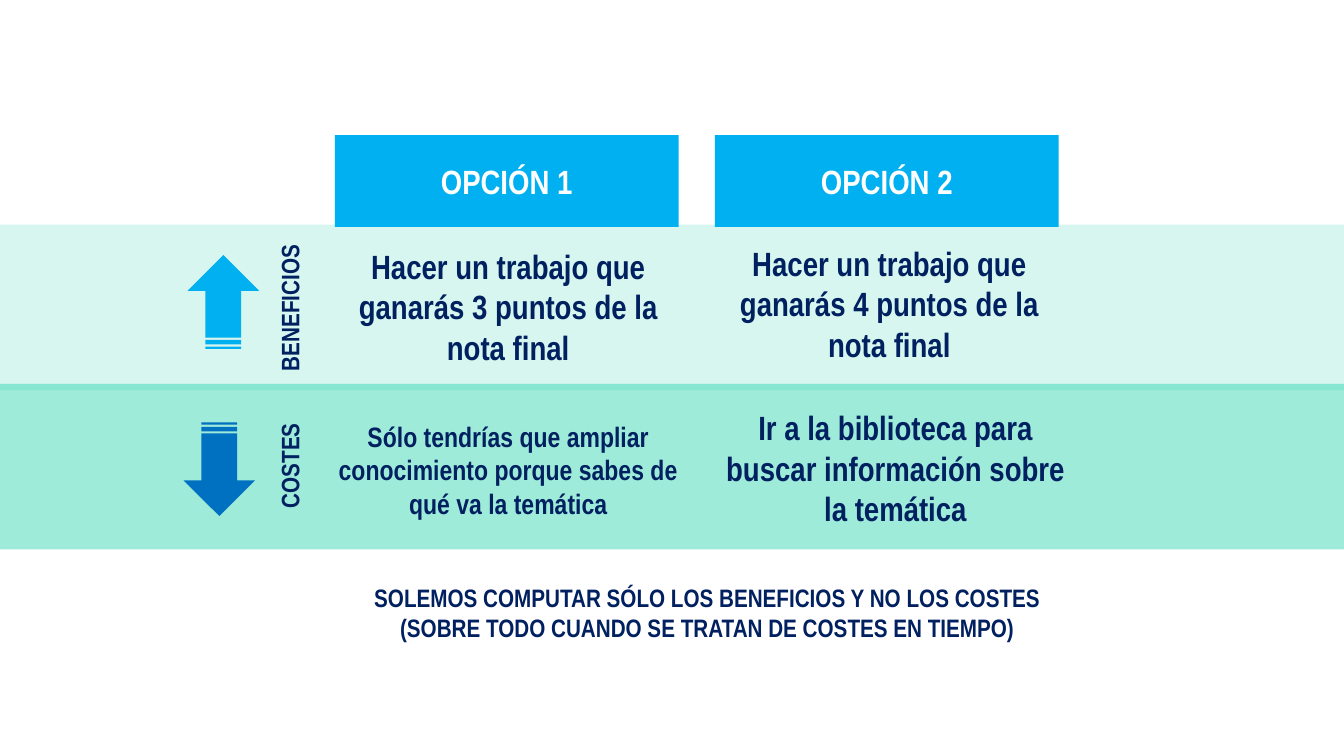
from lxml import etree
from pptx import Presentation
from pptx.dml.color import RGBColor
from pptx.enum.shapes import MSO_SHAPE as Shape
from pptx.enum.text import MSO_ANCHOR as Anchor, MSO_AUTO_SIZE as AutoSize, PP_ALIGN as Align
from pptx.oxml.ns import qn
from pptx.util import Emu, Pt

PX = 9144  # 100 px to the inch
SLIDE_WIDTH, SLIDE_HEIGHT = 1333, 750
FONT = "Arial Narrow"
WHITE = RGBColor(0xFF, 0xFF, 0xFF)
NAVY = RGBColor(0x00, 0x20, 0x60)
SKY = RGBColor(0x00, 0xB0, 0xF0)
BLUE = RGBColor(0x00, 0x70, 0xC0)
MINT = RGBColor(0x29, 0xD3, 0xAD)

BAND_HEIGHT = 164
OPTION_WIDTH = 378
HEADER_WIDTH, HEADER_HEIGHT = 341, 91
ARROW_LENGTH, ARROW_WIDTH = 93, 71
LABEL_LENGTH, LABEL_HEIGHT = 186, 40


def emu(*lengths):
    return [Emu(length * PX) for length in lengths]


def write(shape, text, size, color, align):
    paragraph = shape.text_frame.paragraphs[0]
    paragraph.text = text
    paragraph.alignment = align
    font = paragraph.font
    font.name, font.size, font.bold = FONT, Pt(size), True
    font.color.rgb = color


def add_filled(slide, kind, box, color):
    shape = slide.shapes.add_shape(kind, *emu(*box))
    shape.shadow.inherit = False
    shape.fill.solid()
    shape.fill.fore_color.rgb = color
    shape.line.fill.background()
    return shape


def add_text(slide, box, text, size, align=Align.CENTER):
    textbox = slide.shapes.add_textbox(*emu(*box))
    textbox.text_frame.word_wrap = True
    textbox.text_frame.auto_size = AutoSize.SHAPE_TO_FIT_TEXT
    write(textbox, text, size, NAVY, align)
    return textbox


def add_header(slide, left, top, text):
    header = add_filled(slide, Shape.RECTANGLE, (left, top, HEADER_WIDTH, HEADER_HEIGHT), SKY)
    header.text_frame.vertical_anchor = Anchor.MIDDLE
    write(header, text, 24, WHITE, Align.CENTER)


def add_band(slide, top, opacity, label, label_offset, arrow, options):
    """Draw one translucent row: its arrow, upright label and option texts."""
    band = add_filled(slide, Shape.RECTANGLE, (0, top, SLIDE_WIDTH, BAND_HEIGHT), MINT)
    color = band.fill._xPr.find(qn("a:solidFill"))[0]
    etree.SubElement(color, qn("a:alpha"), val=str(opacity * 1000))

    arrow_left, arrow_offset, rotation, arrow_color = arrow
    arrow_box = (arrow_left, top + arrow_offset, ARROW_LENGTH, ARROW_WIDTH)
    add_filled(slide, Shape.STRIPED_RIGHT_ARROW, arrow_box, arrow_color).rotation = rotation

    label_box = (194, top + label_offset, LABEL_LENGTH, LABEL_HEIGHT)
    add_text(slide, label_box, label, 18, Align.LEFT).rotation = 270

    for left, offset, height, size, text in options:
        add_text(slide, (left, top + offset, OPTION_WIDTH, height), text, size)


def main():
    presentation = Presentation()
    presentation.slide_width, presentation.slide_height = emu(SLIDE_WIDTH, SLIDE_HEIGHT)
    slide = presentation.slides.add_slide(presentation.slide_layouts[6])

    add_band(slide, 223, 19, "BENEFICIOS", 42, (175, 41, 270, SKY), [
        (315, 16, 131, 24, "Hacer un trabajo que ganarás 3 puntos de la nota final"),
        (693, 13, 131, 24, "Hacer un trabajo que ganarás 4 puntos de la nota final"),
    ])
    add_band(slide, 381, 45, "COSTES", 20, (171, 49, 90, BLUE), [
        (315, 30, 111, 20,
         "Sólo tendrías que ampliar conocimiento porque sabes de qué va la temática"),
        (699, 18, 131, 24, "Ir a la biblioteca para buscar información sobre la temática"),
    ])
    for left, text in ((332, "OPCIÓN 1"), (709, "OPCIÓN 2")):
        add_header(slide, left, 134, text)
    add_text(slide, (333, 573, 737, 71),
             "SOLEMOS COMPUTAR SÓLO LOS BENEFICIOS Y NO LOS COSTES "
             "(SOBRE TODO CUANDO SE TRATAN DE COSTES EN TIEMPO)", 18)

    presentation.save("out.pptx")


if __name__ == "__main__":
    main()
